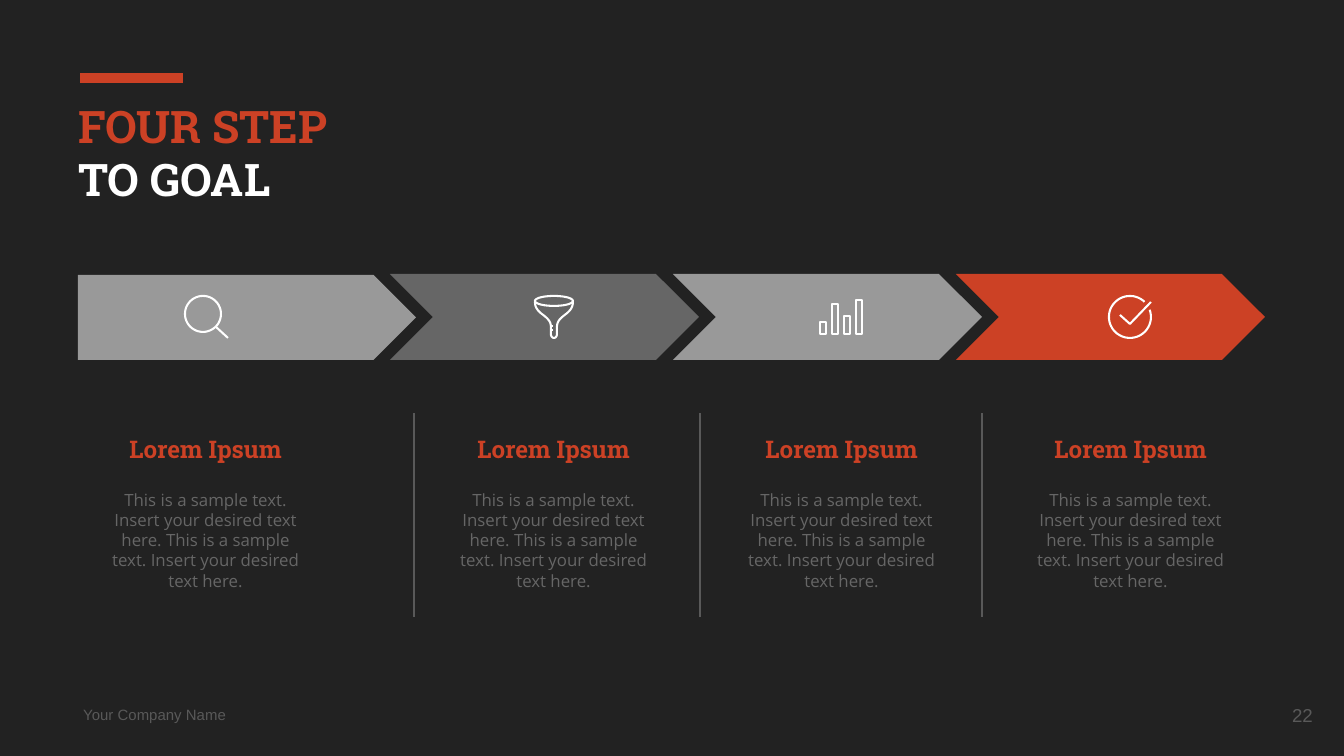
import math
from dataclasses import dataclass

import pptx
import pptx.dml.color
import pptx.enum.shapes
import pptx.enum.text
import pptx.oxml
import pptx.oxml.ns
import pptx.util

KIND = pptx.enum.shapes.MSO_SHAPE
ALIGN = pptx.enum.text.PP_ALIGN
ANCHOR = pptx.enum.text.MSO_ANCHOR


@dataclass
class Theme:
    back: str = "222222"
    accent: str = "CC4125"
    light: str = "999999"
    mid: str = "666666"
    dim: str = "595959"
    white: str = "FFFFFF"
    head: str = "Roboto Slab"
    body: str = "Open Sans"
    plain: str = "Arial"
    title: int = 24
    label: int = 13
    text: int = 9
    foot: int = 8
    page: int = 10
    rule: float = 0.75
    stroke: float = 1.1


THEME = Theme()


def arc(x, y, rx, ry, start=0, end=360):
    turns = [math.radians(start + (end - start) * i / 48) for i in range(49)]
    return [(x + rx * math.cos(t), y + ry * math.sin(t)) for t in turns]


def curve(a, b, c, d):
    steps = [i / 16 for i in range(17)]
    return [tuple((1 - t) ** 3 * p + 3 * (1 - t) ** 2 * t * q
                  + 3 * (1 - t) * t ** 2 * r + t ** 3 * s
                  for p, q, r, s in zip(a, b, c, d)) for t in steps]


def bar(x, top):
    return [(x, 334), (x, top), (x + 6, top), (x + 6, 334), (x, 334)]


LENS = [arc(203, 314, 18, 18), [(216, 327), (228, 338)]]
FUNNEL = [
    arc(554, 301, 19, 5),
    curve((535, 302), (535, 315), (551, 315), (551, 327))
    + curve((551, 335), (552, 339), (556, 339), (557, 335))
    + curve((557, 327), (557, 315), (573, 315), (573, 302)),
    [(551, 326), (553, 326)],
    [(551, 330), (553, 330)],
]
BARS = [bar(820 + 12 * i, top) for i, top in enumerate((322, 304, 316, 300))]
CHECK = [arc(1130, 317, 21, 21, -20, 314),
         [(1120, 315), (1130, 324), (1151, 302)]]

TITLE = [("FOUR STEP", THEME.accent), ("TO GOAL", THEME.white)]
LABEL = "Lorem Ipsum"
BODY = ["This is a sample text.",
        "Insert your desired text here. This is a sample text. "
        "Insert your desired text here."]
STEPS = [
    (90, THEME.light, LENS),
    (438, THEME.mid, FUNNEL),
    (726, THEME.light, BARS),
    (1015, THEME.accent, CHECK),
]
RULES = [414, 700, 982]
WIDE, HIGH = 1344, 756
SCALE = pptx.util.Inches(10) / WIDE


def px(*nums):
    return [pptx.util.Emu(round(n * SCALE)) for n in nums]


def rgb(code):
    return pptx.dml.color.RGBColor.from_string(code)


def style(para, size, font, color, bold=False, align=ALIGN.LEFT):
    para.alignment = align
    para.font.size = pptx.util.Pt(size)
    para.font.name = font
    para.font.bold = bold
    para.font.color.rgb = rgb(color)


def fit(frame, anchor):
    frame.word_wrap = True
    frame.auto_size = pptx.enum.text.MSO_AUTO_SIZE.NONE
    frame.vertical_anchor = anchor
    inset = pptx.util.Inches(0.1)
    frame.margin_left = frame.margin_right = inset
    frame.margin_top = frame.margin_bottom = inset


def write(slide, box, lines, *look, **more):
    frame = slide.shapes.add_textbox(*px(*box)).text_frame
    fit(frame, ANCHOR.MIDDLE)
    frame.text = "\n".join(lines)
    for para in frame.paragraphs:
        style(para, *look, **more)


def block(slide, kind, box, color):
    shape = slide.shapes.add_shape(kind, *px(*box))
    shape.shadow.inherit = False
    shape.fill.solid()
    shape.fill.fore_color.rgb = rgb(color)
    shape.line.fill.background()


def rule(slide, x):
    line = slide.shapes.add_connector(
        pptx.enum.shapes.MSO_CONNECTOR.STRAIGHT, *px(x, 413, x, 617))
    line.line.color.rgb = rgb(THEME.dim)
    line.line.width = pptx.util.Pt(THEME.rule)
    props = line._element.spPr
    props.append(pptx.oxml.parse_xml(
        "<a:effectLst %s/>" % pptx.oxml.ns.nsdecls("a")))


def icon(slide, strokes):
    paths = [[px(*point) for point in stroke] for stroke in strokes]
    pen = slide.shapes.build_freeform(*paths[0][0])
    for i, path in enumerate(paths):
        if i:
            pen.move_to(*path[0])
        pen.add_line_segments(path[1:], close=False)
    shape = pen.convert_to_shape()
    shape.shadow.inherit = False
    shape.fill.background()
    shape.line.color.rgb = rgb(THEME.white)
    shape.line.width = pptx.util.Pt(THEME.stroke)


def main():
    deck = pptx.Presentation()
    deck.slide_width, deck.slide_height = px(WIDE, HIGH)
    slide = deck.slides.add_slide(deck.slide_layouts[5])
    slide.background.fill.solid()
    slide.background.fill.fore_color.rgb = rgb(THEME.back)

    title = slide.shapes.title
    title.left, title.top, title.width, title.height = px(65, 85, 606, 156)
    frame = title.text_frame
    fit(frame, ANCHOR.TOP)
    frame.text = "\n".join(text for text, color in TITLE)
    for para, (text, color) in zip(frame.paragraphs, TITLE):
        style(para, THEME.title, THEME.head, color, bold=True)

    block(slide, KIND.RECTANGLE, (80, 73, 103, 10), THEME.accent)
    for i, (left, color, strokes) in enumerate(STEPS):
        if i:
            block(slide, KIND.CHEVRON, (107 + 283 * i, 274, 309, 86), color)
        else:
            block(slide, KIND.PENTAGON, (78, 275, 338, 85), color)
        icon(slide, strokes)
        write(slide, (left, 438, 231, 22), [LABEL], THEME.label, THEME.head,
              THEME.accent, bold=True, align=ALIGN.CENTER)
        write(slide, (left, 486, 231, 108), BODY, THEME.text, THEME.body,
              THEME.mid, align=ALIGN.CENTER)
    for x in RULES:
        rule(slide, x)

    write(slide, (70, 697, 224, 35), ["Your Company Name"],
          THEME.foot, THEME.plain, THEME.dim)
    write(slide, (1246, 686, 80, 58), ["22"],
          THEME.page, THEME.plain, THEME.dim, align=ALIGN.RIGHT)
    deck.save("out.pptx")


if __name__ == "__main__":
    main()
